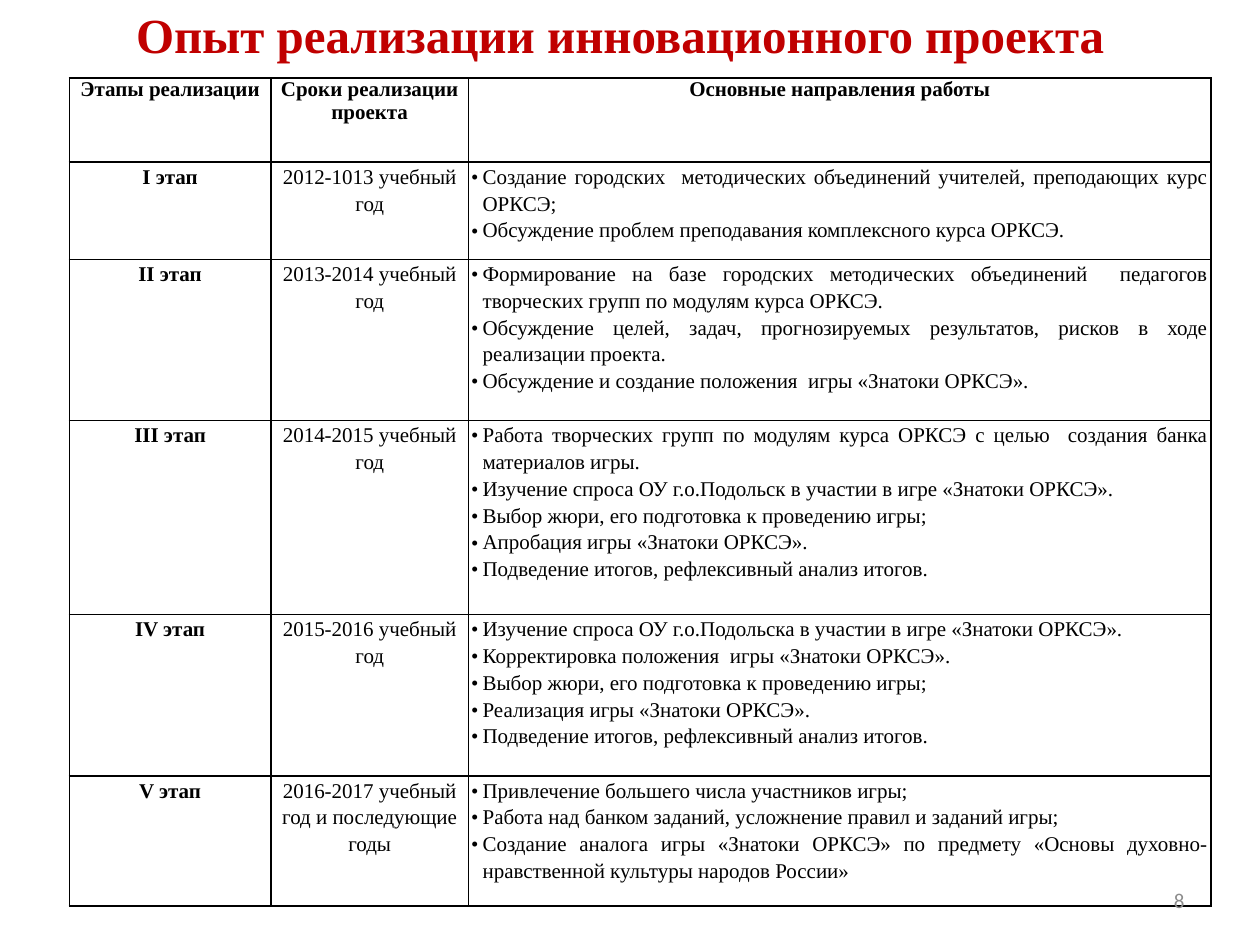
from lxml import etree
from pptx import Presentation
from pptx.dml.color import RGBColor
from pptx.enum.text import MSO_ANCHOR, MSO_AUTO_SIZE, PP_ALIGN
from pptx.oxml.ns import qn
from pptx.util import Cm, Pt

CENTER, RIGHT, JUSTIFY = PP_ALIGN.CENTER, PP_ALIGN.RIGHT, PP_ALIGN.JUSTIFY
MIDDLE = MSO_ANCHOR.MIDDLE
NO_AUTOFIT = MSO_AUTO_SIZE.NONE
TITLE_ONLY = 5

RED = RGBColor(0xC0, 0x00, 0x00)
BLACK = RGBColor(0x00, 0x00, 0x00)
GRAY = RGBColor(0x8C, 0x8C, 0x8C)

SERIF = "Times New Roman"
TITLE_FONT = {"name": SERIF, "size": Pt(28), "bold": True, "color": RED}
BOLD_FONT = {"name": SERIF, "size": Pt(12), "bold": True, "color": BLACK}
BODY_FONT = {**BOLD_FONT, "bold": False}
NUMBER_FONT = {"name": "Calibri", "size": Pt(12), "color": GRAY}

CELL_MARGINS = {"margin_left": Cm(0.05), "margin_right": Cm(0.05),
                "margin_top": 0, "margin_bottom": 0}
COLUMN_WIDTHS = [4.06, 3.99, 14.96]
ROW_HEIGHTS = [1.7, 1.96, 3.25, 3.91, 3.25, 2.62]

HEADERS = ["Этапы реализации", "Сроки реализации проекта", "Основные направления работы"]
STAGES = [
    ("I этап", "2012-1013 учебный год", [
        "Создание городских  методических объединений учителей, преподающих курс ОРКСЭ;",
        "Обсуждение проблем преподавания комплексного курса ОРКСЭ.",
    ]),
    ("II этап", "2013-2014 учебный год", [
        "Формирование на базе городских методических объединений  педагогов "
        "творческих групп по модулям курса ОРКСЭ.",
        "Обсуждение целей, задач, прогнозируемых результатов, рисков в ходе реализации проекта.",
        "Обсуждение и создание положения  игры «Знатоки ОРКСЭ».",
    ]),
    ("III этап", "2014-2015 учебный год", [
        "Работа творческих групп по модулям курса ОРКСЭ с целью  создания банка материалов игры.",
        "Изучение спроса ОУ г.о.Подольск в участии в игре «Знатоки ОРКСЭ».",
        "Выбор жюри, его подготовка к проведению игры;",
        "Апробация игры «Знатоки ОРКСЭ».",
        "Подведение итогов, рефлексивный анализ итогов.",
    ]),
    ("IV этап", "2015-2016 учебный год", [
        "Изучение спроса ОУ г.о.Подольска в участии в игре «Знатоки ОРКСЭ».",
        "Корректировка положения  игры «Знатоки ОРКСЭ».",
        "Выбор жюри, его подготовка к проведению игры;",
        "Реализация игры «Знатоки ОРКСЭ».",
        "Подведение итогов, рефлексивный анализ итогов.",
    ]),
    ("V этап", "2016-2017 учебный год и последующие годы", [
        "Привлечение большего числа участников игры;",
        "Работа над банком заданий, усложнение правил и заданий игры;",
        "Создание аналога игры «Знатоки ОРКСЭ» по предмету "
        "«Основы духовно-нравственной культуры народов России»",
    ]),
]


def set_values(target, values):
    for name, value in values.items():
        setattr(target, name, value)


class SlideBuilder:
    def __init__(self, slide):
        self.slide = slide

    def fill_text(self, frame, texts, font, align, spacing=None, bulleted=False):
        for index, text in enumerate(texts):
            para = frame.paragraphs[0] if index == 0 else frame.add_paragraph()
            set_values(para, {"alignment": align, "line_spacing": spacing})
            span = para.add_run()
            span.text = text
            set_values(span.font, {key: value for key, value in font.items() if key != "color"})
            span.font.color.rgb = font["color"]
            if bulleted:
                self.add_bullet(para)

    def add_bullet(self, para):
        properties = para._p.get_or_add_pPr()
        indent = Cm(0.23)
        properties.set("marL", str(indent))
        properties.set("indent", str(-indent))
        etree.SubElement(properties, qn("a:buFont"), typeface=SERIF)
        etree.SubElement(properties, qn("a:buChar"), char="•")
        stops = etree.SubElement(properties, qn("a:tabLst"))
        etree.SubElement(stops, qn("a:tab"), pos=str(Cm(0.36)), algn="l")

    def add_borders(self, cell):
        properties = cell._tc.get_or_add_tcPr()
        for index, side in enumerate(("a:lnL", "a:lnR", "a:lnT", "a:lnB")):
            line = etree.Element(qn(side), w=str(Pt(1)))
            fill = etree.SubElement(line, qn("a:solidFill"))
            etree.SubElement(fill, qn("a:srgbClr"), val=str(BLACK))
            properties.insert(index, line)

    def title(self, text, left, top, width, height):
        box = self.slide.shapes.title
        set_values(box, {"left": Cm(left), "top": Cm(top),
                         "width": Cm(width), "height": Cm(height)})
        set_values(box.text_frame, {"auto_size": NO_AUTOFIT, "vertical_anchor": MIDDLE})
        self.fill_text(box.text_frame, [text], TITLE_FONT, CENTER)

    def text(self, text, font, align, left, top, width, height):
        box = self.slide.shapes.add_textbox(Cm(left), Cm(top), Cm(width), Cm(height))
        set_values(box.text_frame, {"word_wrap": True, "vertical_anchor": MIDDLE})
        self.fill_text(box.text_frame, [text], font, align)

    def stage_table(self, left, top):
        table = self.slide.shapes.add_table(
            len(ROW_HEIGHTS), len(COLUMN_WIDTHS), Cm(left), Cm(top),
            Cm(sum(COLUMN_WIDTHS)), Cm(sum(ROW_HEIGHTS))).table
        set_values(table, {"first_row": False, "horz_banding": False})
        for column, width in zip(table.columns, COLUMN_WIDTHS):
            column.width = Cm(width)
        for row, height in zip(table.rows, ROW_HEIGHTS):
            row.height = Cm(height)
        for cell in table.iter_cells():
            set_values(cell, CELL_MARGINS)
            cell.fill.background()
            self.add_borders(cell)

        for column, header in enumerate(HEADERS):
            self.fill_text(table.cell(0, column).text_frame, [header], BOLD_FONT, CENTER)
        for row, (stage, period, tasks) in enumerate(STAGES, start=1):
            frames = [table.cell(row, column).text_frame for column in range(3)]
            self.fill_text(frames[0], [stage], BOLD_FONT, CENTER, 1.15)
            self.fill_text(frames[1], [period], BODY_FONT, CENTER, 1.15)
            self.fill_text(frames[2], tasks, BODY_FONT, JUSTIFY, 1.15, bulleted=True)


def main():
    deck = Presentation()
    set_values(deck, {"slide_width": Cm(25.4), "slide_height": Cm(19.05)})
    page = SlideBuilder(deck.slides.add_slide(deck.slide_layouts[TITLE_ONLY]))
    page.title("Опыт реализации инновационного проекта", 1.78, -0.2, 21.44, 1.78)
    page.stage_table(1.4, 1.57)
    page.text("8", NUMBER_FONT, RIGHT, 18.2, 17.65, 5.93, 1.01)
    deck.save("out.pptx")


if __name__ == "__main__":
    main()
